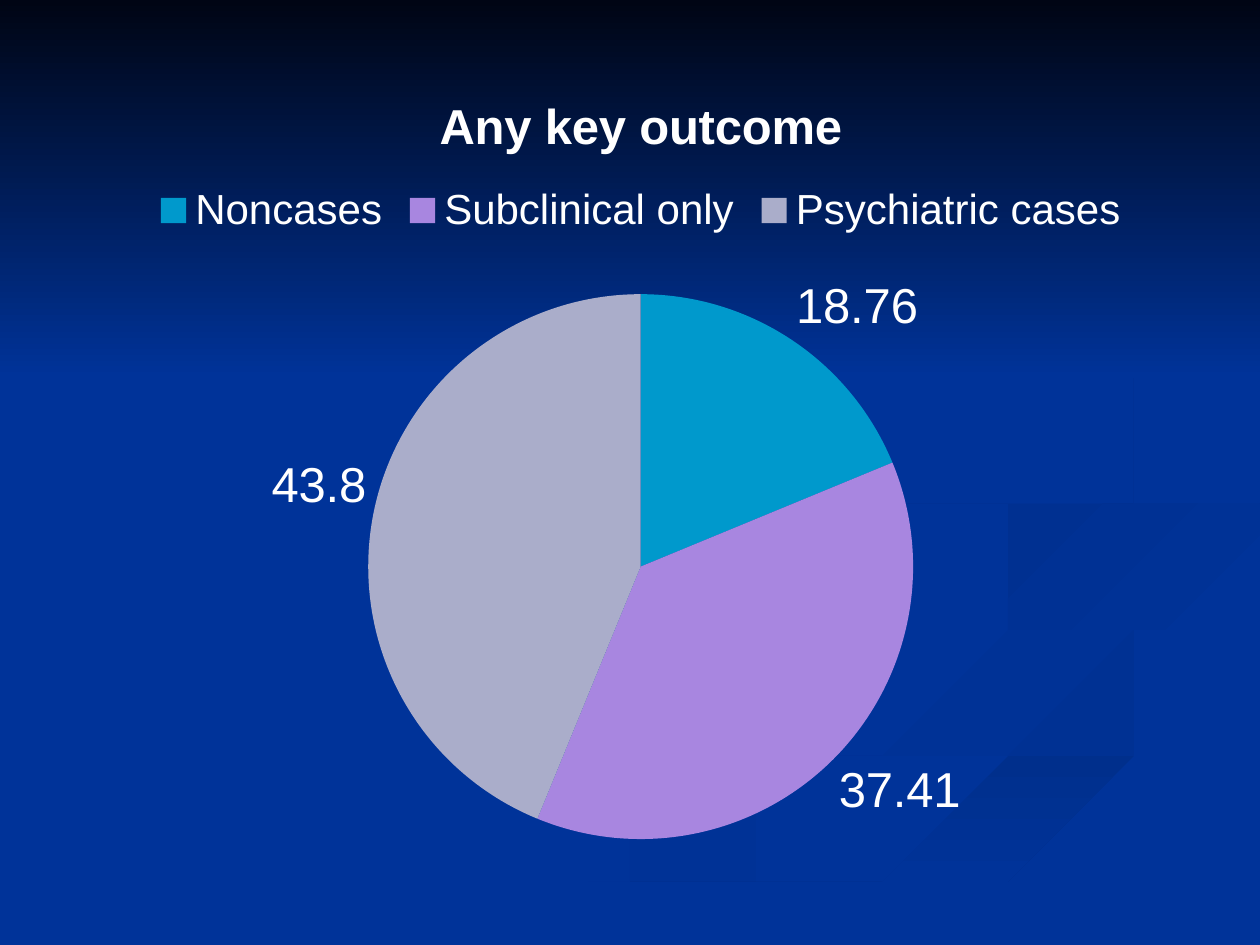
from dataclasses import dataclass

from lxml.etree import SubElement
from pptx import Presentation
from pptx.chart.chart import Chart
from pptx.chart.data import CategoryChartData
from pptx.dml.color import RGBColor
from pptx.enum.chart import XL_CHART_TYPE, XL_LABEL_POSITION, XL_LEGEND_POSITION
from pptx.oxml.ns import qn
from pptx.slide import Slide
from pptx.util import Inches, Pt

BACKGROUND = "003399"
WHITE = "FFFFFF"
TITLE = "Any key outcome"
CURVE_STEPS = 6

Point = tuple[float, float]


@dataclass(frozen=True)
class Ribbon:
    """A band between two smooth edges, which run there and back, in inches."""
    outward: list[Point]
    back: list[Point]
    start_color: str
    end_color: str
    angle: int


@dataclass(frozen=True)
class Slice:
    name: str
    value: float
    color: str


RIBBONS = [
    Ribbon([(5.75, 4.6), (5.86, 4.87), (6.97, 5.25), (7.86, 5.66), (7.14, 6.05), (5, 6.61), (3, 7.49)],
           [(3.61, 7.49), (5.32, 6.74), (7.4, 6.18), (8, 5.81), (7.67, 5.47), (6.26, 5.02), (5.75, 4.6)],
           BACKGROUND, "003193", 0),
    Ribbon([(7.24, 4.64), (7.46, 5), (8.54, 5.39), (9.18, 5.81), (8.94, 6.05)],
           [(8.94, 6.05), (9.43, 5.7), (8.88, 5.35), (7.58, 4.98), (7.24, 4.64)],
           BACKGROUND, "003193", 45),
    Ribbon([(5.03, 7.49), (6.3, 6.93), (8, 6.38), (9.98, 5.81)],
           [(9.98, 6.09), (8.21, 6.51), (6.7, 7.02), (5.71, 7.49)],
           "002F8C", BACKGROUND, 90),
    Ribbon([(4.77, 7.49), (6.63, 6.68), (8.92, 6.05), (9.43, 5.7), (8.51, 5.24), (7.25, 4.64),
            (7.88, 4.22), (9.99, 3.87)],
           [(9.99, 4.02), (8.35, 4.3), (7.81, 4.63), (8.48, 5.03), (9.99, 5.38),
            (9.99, 5.81), (6.96, 6.69), (5.03, 7.49)],
           BACKGROUND, BACKGROUND, 0),
    Ribbon([(9.98, 4.02), (8.65, 4.24), (7.81, 4.6), (8.26, 4.96)],
           [(8.26, 4.96), (8.05, 4.72), (8.78, 4.39), (9.98, 4.2)],
           "003091", BACKGROUND, 45),
    Ribbon([(7.62, 2.33), (8.46, 2.79), (8.89, 3.35), (8.42, 3.78), (6.49, 4.2), (5.77, 4.62), (6.22, 5)],
           [(6.22, 5), (5.93, 4.7), (6.83, 4.3), (8.41, 3.96), (8.94, 3.44), (8.43, 2.75), (7.62, 2.33)],
           "002F8E", BACKGROUND, 45),
    Ribbon([(0, 0), (10, 0)], [(10, 3.08), (0, 3.08)], "000514", BACKGROUND, 90),
]

SLICES = [
    Slice("Noncases", 18.76, "0099CC"),
    Slice("Subclinical only", 37.41, "A886E0"),
    Slice("Psychiatric cases", 43.8, "AAADCA"),
]

PLOT_LAYOUT = {"layoutTarget": "inner", "xMode": "edge", "yMode": "edge",
               "x": "0.28", "y": "0.28", "w": "0.44", "h": "0.67"}


def color(value: str) -> RGBColor:
    return RGBColor.from_string(value)


def set_font(font, size: int, name: str = "Arial", bold: bool = False) -> None:
    for attribute, value in {"size": Pt(size), "name": name, "bold": bold}.items():
        setattr(font, attribute, value)
    font.color.rgb = color(WHITE)


def smooth(points: list[Point]) -> list[Point]:
    """Join the points with a Catmull-Rom curve."""
    padded = [points[0], *points, points[-1]]
    curve = []
    for before, start, end, after in zip(padded, padded[1:], padded[2:], padded[3:]):
        for step in range(CURVE_STEPS):
            t = step / CURVE_STEPS
            curve.append(tuple(
                b + t * ((c - a) + t * ((2 * a - 5 * b + 4 * c - d) + t * (3 * b - a - 3 * c + d))) / 2
                for a, b, c, d in zip(before, start, end, after)))
    return [*curve, points[-1]]


def draw_ribbon(slide: Slide, ribbon: Ribbon) -> None:
    start, *others = smooth(ribbon.outward) + smooth(ribbon.back)
    builder = slide.shapes.build_freeform(*start, scale=Inches(1))
    builder.add_line_segments(others, close=True)
    shape = builder.convert_to_shape()
    shape.shadow.inherit = False
    shape.line.fill.background()
    shape.fill.gradient()
    shape.fill.gradient_angle = -ribbon.angle % 360
    for stop, value in zip(shape.fill.gradient_stops, (ribbon.start_color, ribbon.end_color)):
        stop.color.rgb = color(value)


def place_plot(chart: Chart) -> None:
    """Fix the pie's position as fractions of the chart frame."""
    plot_area = chart._chartSpace.chart.plotArea
    for layout in plot_area.findall(qn("c:layout")):
        plot_area.remove(layout)
    layout = SubElement(plot_area, qn("c:layout"))
    plot_area.insert(0, layout)
    manual = SubElement(layout, qn("c:manualLayout"))
    for tag, value in PLOT_LAYOUT.items():
        SubElement(manual, qn(f"c:{tag}")).set("val", value)


def draw_pie(slide: Slide) -> None:
    data = CategoryChartData()
    data.categories = [item.name for item in SLICES]
    data.add_series(TITLE, [item.value for item in SLICES])
    chart = slide.shapes.add_chart(XL_CHART_TYPE.PIE, Inches(0.17), Inches(0.5),
                                   Inches(9.83), Inches(6.5), data).chart
    set_font(chart.font, 18, "Times New Roman")
    chart.has_title = True
    chart.chart_title.text_frame.text = TITLE
    set_font(chart.chart_title.text_frame.paragraphs[0].runs[0].font, 28, bold=True)
    chart.has_legend = True
    chart.legend.position = XL_LEGEND_POSITION.TOP
    chart.legend.include_in_layout = False
    set_font(chart.legend.font, 24)
    plot = chart.plots[0]
    plot.vary_by_categories = True
    series = plot.series[0]
    for index, item in enumerate(SLICES):
        point_format = series.points[index].format
        point_format.fill.solid()
        point_format.fill.fore_color.rgb = color(item.color)
        point_format.line.fill.background()
    labels = series.data_labels
    for attribute, value in {"show_value": True, "show_percentage": False,
                             "position": XL_LABEL_POSITION.OUTSIDE_END}.items():
        setattr(labels, attribute, value)
    set_font(labels.font, 28)
    place_plot(chart)


def main() -> None:
    presentation = Presentation()
    presentation.slide_width, presentation.slide_height = Inches(10), Inches(7.5)
    slide = presentation.slides.add_slide(presentation.slide_layouts[6])
    slide.background.fill.solid()
    slide.background.fill.fore_color.rgb = color(BACKGROUND)
    for ribbon in RIBBONS:
        draw_ribbon(slide, ribbon)
    draw_pie(slide)
    presentation.save("out.pptx")


if __name__ == "__main__":
    main()
